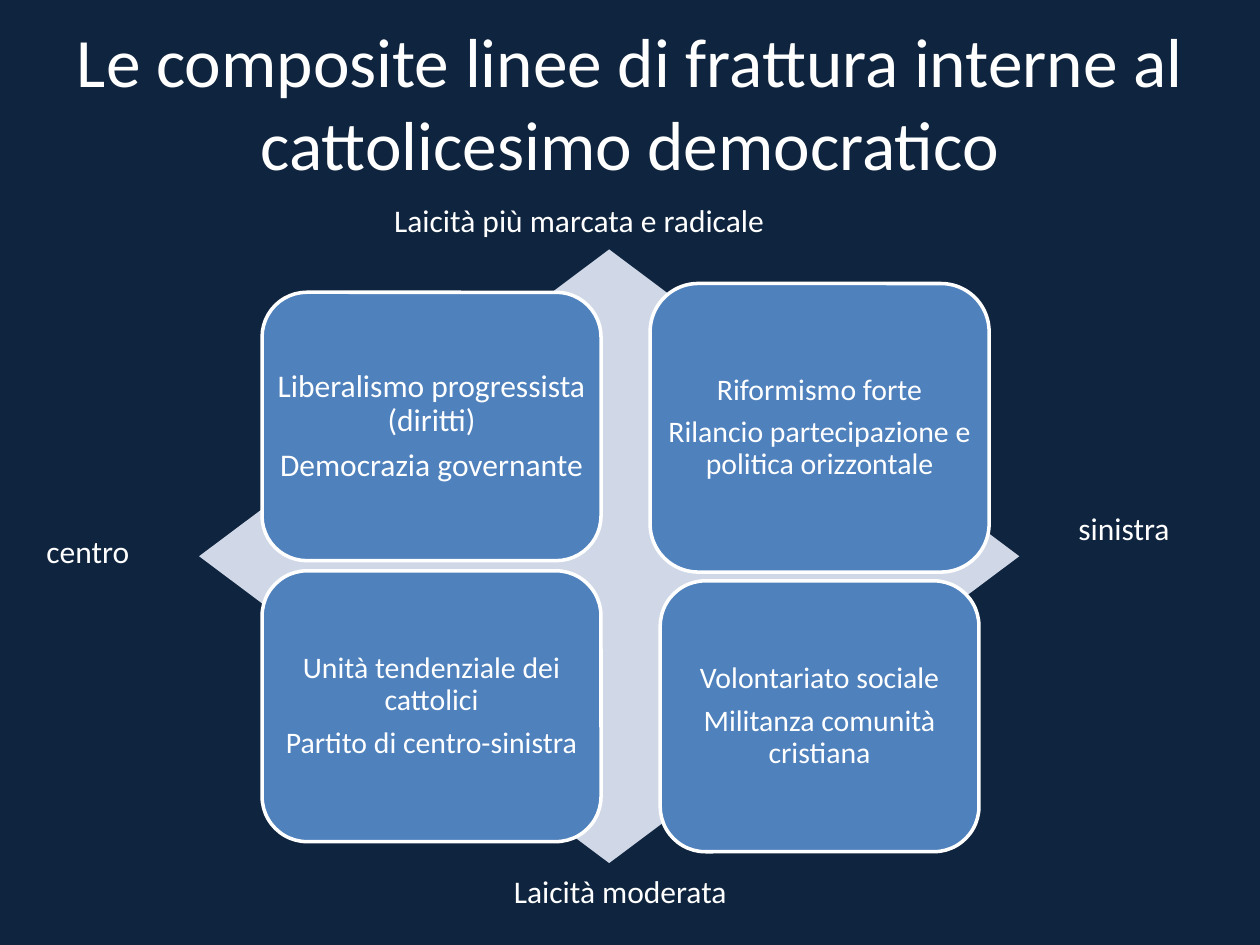
import pptx
import pptx.util
import pptx.dml.color
import pptx.enum.shapes
import pptx.enum.text

Pt = pptx.util.Pt
SHAPES = pptx.enum.shapes.MSO_SHAPE
ALIGN = pptx.enum.text.PP_ALIGN
ANCHOR = pptx.enum.text.MSO_ANCHOR

COLOURS = {
    "background": "0F243E",
    "text": "FFFFFF",
    "diamond": "D0D8E8",
    "quadrant": "4F81BD",
    "outline": "FFFFFF",
}

TITLE = "Le composite linee di frattura interne al cattolicesimo democratico"

QUADRANTS = [
    ((149.76, 167.04, 193.68, 153.36), 18,
     ["Liberalismo progressista (diritti)", "Democrazia governante"]),
    ((371.52, 162, 193.68, 164.88), 17,
     ["Riformismo forte", "Rilancio partecipazione e politica orizzontale"]),
    ((149.76, 326.16, 193.68, 154.8), 17,
     ["Unità tendenziale dei cattolici", "Partito di centro-sinistra"]),
    ((377.28, 331.92, 182.16, 154.8), 17,
     ["Volontariato sociale", "Militanza comunità cristiana"]),
]

AXIS_LABELS = [
    ("sinistra", (609.12, 287.28, 96.48, 28.8)),
    ("centro", (19.44, 300.24, 96.48, 28.8)),
    ("Laicità moderata", (286.56, 494.64, 175.68, 28.8)),
    ("Laicità più marcata e radicale", (218.16, 111.6, 266.4, 28.8)),
]


def colour(name):
    return pptx.dml.color.RGBColor.from_string(COLOURS[name])


def format_text(frame, size, alignment):
    for para in frame.paragraphs:
        para.alignment = alignment
        for span in para.runs:
            span.font.name = "Calibri"
            span.font.size = Pt(size)
            span.font.color.rgb = colour("text")


def place_title(page, box):
    title = page.shapes.title
    title.left, title.top, title.width, title.height = map(Pt, box)
    frame = title.text_frame
    frame.text = TITLE
    frame.word_wrap = True
    frame.auto_size = pptx.enum.text.MSO_AUTO_SIZE.NONE
    frame.vertical_anchor = ANCHOR.MIDDLE
    format_text(frame, 39.6, ALIGN.CENTER)


def add_filled_shape(page, kind, box, fill):
    shape = page.shapes.add_shape(kind, *map(Pt, box))
    shape.shadow.inherit = False
    shape.fill.solid()
    shape.fill.fore_color.rgb = colour(fill)
    return shape


def place_diamond(page, box):
    diamond = add_filled_shape(page, SHAPES.DIAMOND, box, "diamond")
    diamond.line.fill.background()


def place_quadrant(page, box, size, lines):
    quadrant = add_filled_shape(page, SHAPES.ROUNDED_RECTANGLE, box, "quadrant")
    quadrant.line.color.rgb = colour("outline")
    quadrant.line.width = Pt(2)
    frame = quadrant.text_frame
    frame.text = "\n".join(lines)
    frame.word_wrap = True
    frame.vertical_anchor = ANCHOR.MIDDLE
    frame.margin_left = frame.margin_right = Pt(0)
    frame.margin_top = frame.margin_bottom = Pt(0)
    format_text(frame, size, ALIGN.CENTER)
    for para in frame.paragraphs:
        para.line_spacing = 0.9
        para.space_after = Pt(round(size * 0.35, 1))


def place_axis_label(page, box, text):
    label = page.shapes.add_textbox(*map(Pt, box))
    frame = label.text_frame
    frame.text = text
    frame.word_wrap = True
    format_text(frame, 18, ALIGN.LEFT)


def main():
    deck = pptx.Presentation()
    deck.slide_width, deck.slide_height = Pt(720), Pt(540)
    page = deck.slides.add_slide(deck.slide_layouts.get_by_name("Title Only"))
    page.background.fill.solid()
    page.background.fill.fore_color.rgb = colour("background")
    place_title(page, (36, 21.6, 648, 72.72))
    place_diamond(page, (113.76, 142.56, 468.72, 350.64))
    for box, size, lines in QUADRANTS:
        place_quadrant(page, box, size, lines)
    for text, box in AXIS_LABELS:
        place_axis_label(page, box, text)
    deck.save("out.pptx")


if __name__ == "__main__":
    main()
